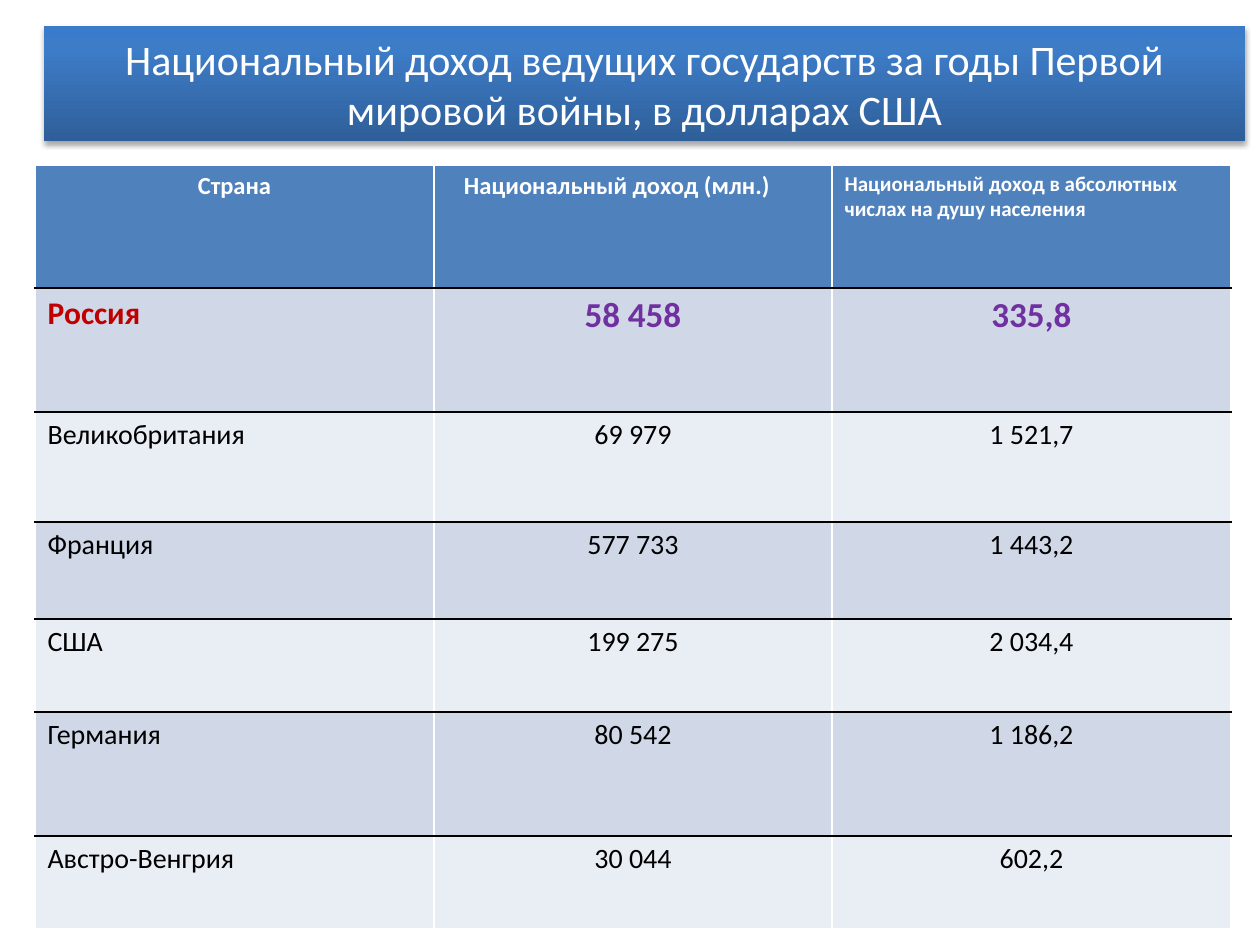
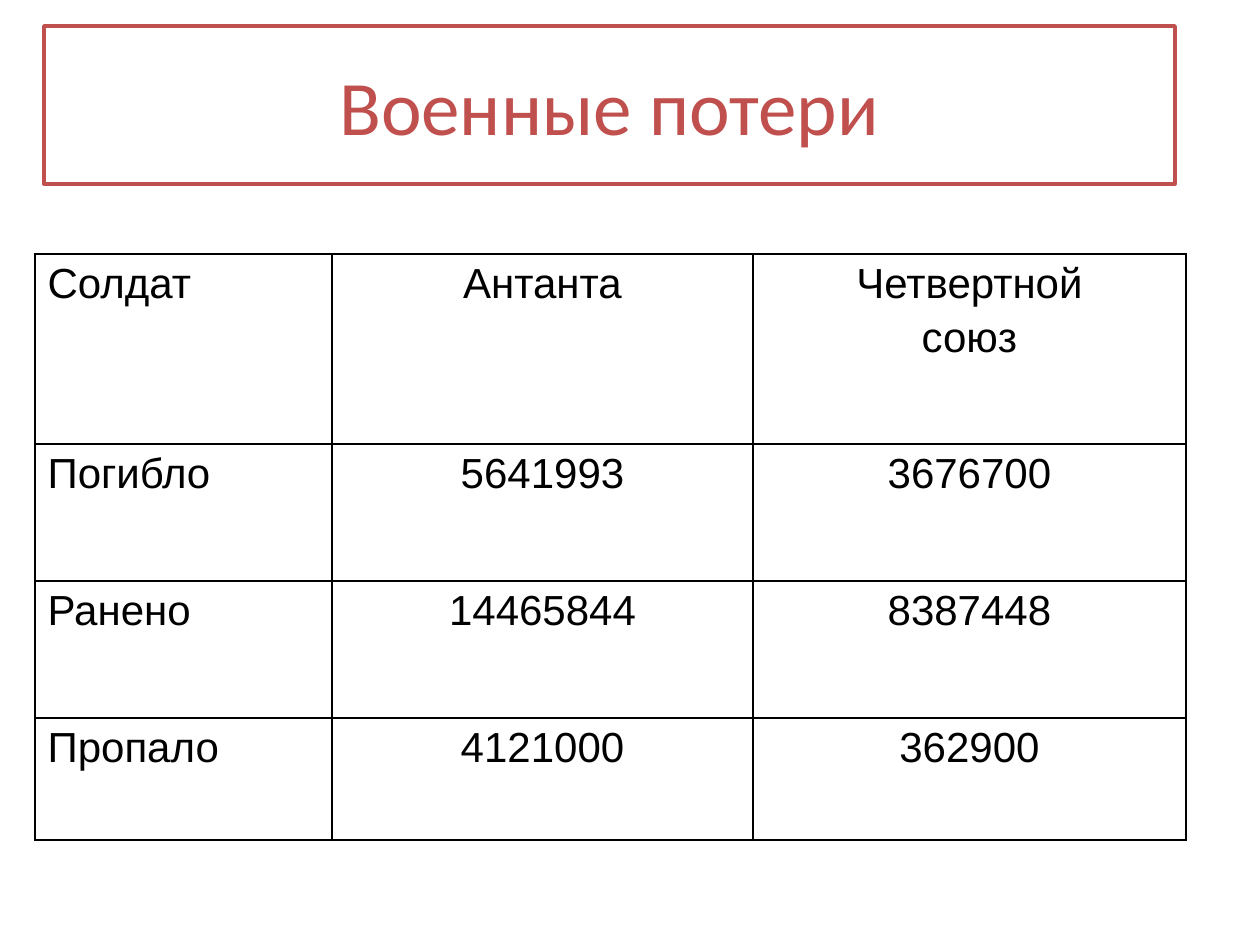
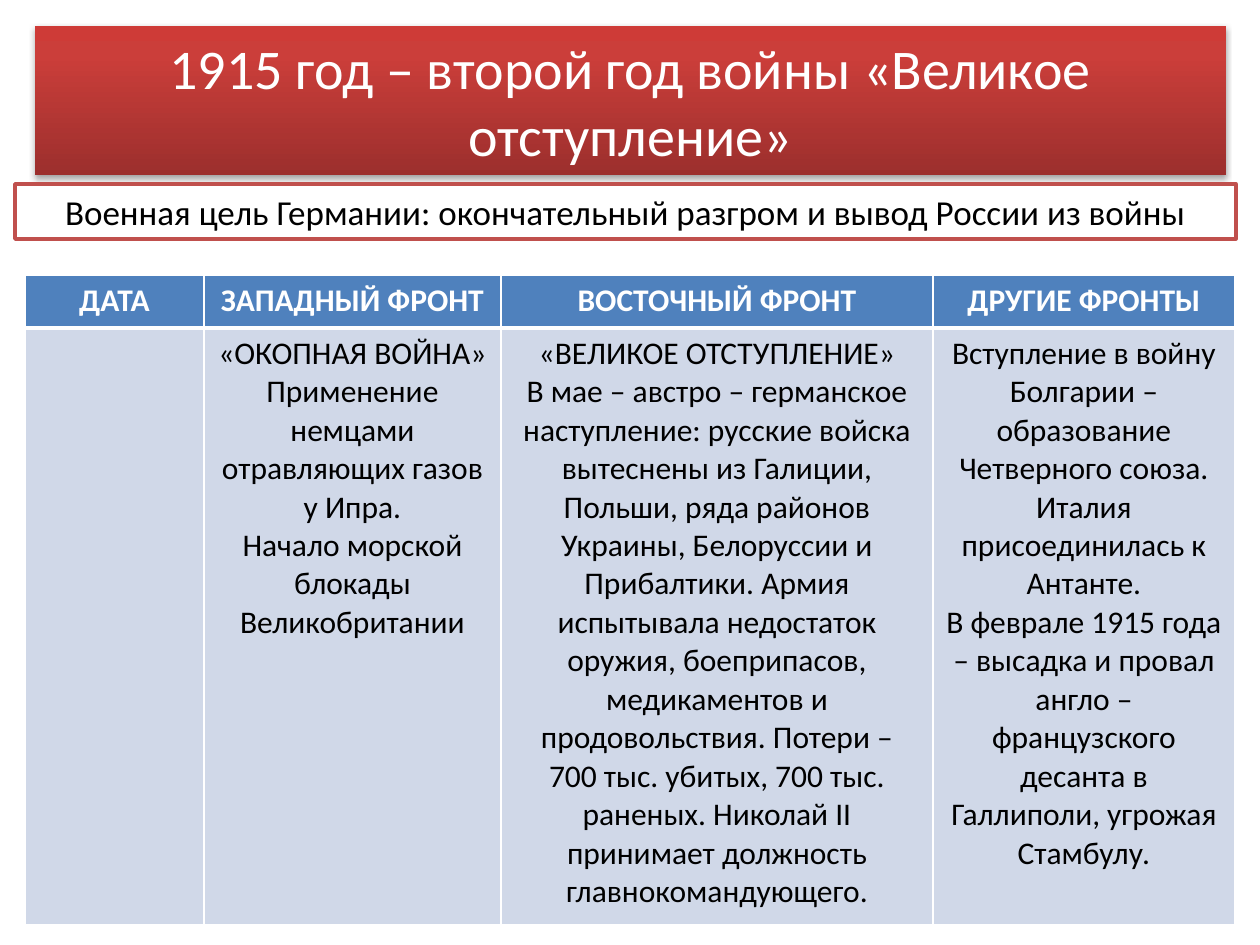
from copy import deepcopy

from lxml.etree import SubElement
from pptx import Presentation
from pptx.dml.color import RGBColor
from pptx.enum.shapes import MSO_SHAPE
from pptx.enum.text import MSO_ANCHOR, MSO_AUTO_SIZE, PP_ALIGN
from pptx.oxml.ns import qn
from pptx.util import Emu, Pt

WHITE = RGBColor(0xFF, 0xFF, 0xFF)
BLACK = RGBColor(0x00, 0x00, 0x00)
HEADER_BLUE = RGBColor(0x4F, 0x81, 0xBD)
BAND_DARK = RGBColor(0xD0, 0xD8, 0xE8)
BAND_LIGHT = RGBColor(0xE9, 0xED, 0xF4)
BRICK = RGBColor(0xC0, 0x50, 0x4D)
RUSSIA_RED = RGBColor(0xC0, 0x00, 0x00)
RUSSIA_PURPLE = RGBColor(0x70, 0x30, 0xA0)
BLUE_GRADIENT = (
    RGBColor(0x2F, 0x5F, 0x99), RGBColor(0x3D, 0x7C, 0xC7), RGBColor(0x3A, 0x7C, 0xCB))
RED_GRADIENT = (
    RGBColor(0x9C, 0x2F, 0x2D), RGBColor(0xCB, 0x3E, 0x3A), RGBColor(0xCE, 0x3B, 0x37))
GRADIENT_POSITIONS = (0, 0.8, 1)

BODY_FONT = "Calibri"
LOSSES_FONT = "Arial"
LEFT, CENTER = PP_ALIGN.LEFT, PP_ALIGN.CENTER

INCOME_ROWS = [
    ("Страна", "Национальный доход (млн.)",
     "Национальный доход в абсолютных числах на душу населения"),
    ("Россия", "58 458", "335,8"),
    ("Великобритания", "69 979", "1 521,7"),
    ("Франция", "577 733", "1 443,2"),
    ("США", "199 275", "2 034,4"),
    ("Германия", "80 542", "1 186,2"),
    ("Австро-Венгрия", "30 044", "602,2"),
]
LOSSES_ROWS = [
    ("Солдат", "Антанта", "Четвертной\nсоюз"),
    ("Погибло", "5641993", "3676700"),
    ("Ранено", "14465844", "8387448"),
    ("Пропало", "4121000", "362900"),
]
FRONTS_ROWS = [
    ("ДАТА", "ЗАПАДНЫЙ ФРОНТ", "ВОСТОЧНЫЙ ФРОНТ", "ДРУГИЕ ФРОНТЫ"),
    ("",
     "«ОКОПНАЯ ВОЙНА»\n"
     "Применение немцами отравляющих газов у Ипра.\n"
     "Начало морской блокады Великобритании",
     "«ВЕЛИКОЕ ОТСТУПЛЕНИЕ»\n"
     "В мае – австро – германское наступление: русские войска вытеснены из Галиции, "
     "Польши, ряда районов Украины, Белоруссии и Прибалтики. Армия испытывала "
     "недостаток оружия, боеприпасов, медикаментов и продовольствия. Потери – "
     "700 тыс. убитых, 700 тыс. раненых. Николай II принимает должность "
     "главнокомандующего.",
     "Вступление в войну Болгарии – образование Четверного союза.\n"
     "Италия присоединилась к Антанте.\n"
     "В феврале 1915 года – высадка и провал англо – французского десанта в "
     "Галлиполи, угрожая Стамбулу."),
]


def px(length):
    return Emu(round(length * 914400 / 126))


def format_text(text_frame, size, color, align=CENTER, bold=False, font=BODY_FONT):
    for paragraph in text_frame.paragraphs:
        paragraph.alignment = align
        for run in paragraph.runs:
            run.font.name = font
            run.font.size = Pt(size)
            run.font.bold = bold
            run.font.color.rgb = color


def fill_box(box, text, size, color):
    frame = box.text_frame
    frame.text = text
    frame.word_wrap = True
    frame.auto_size = MSO_AUTO_SIZE.NONE
    frame.vertical_anchor = MSO_ANCHOR.MIDDLE
    format_text(frame, size, color)


def outline_box(box):
    box.fill.solid()
    box.fill.fore_color.rgb = WHITE
    box.line.color.rgb = BRICK
    box.line.width = Pt(2)


def add_titled_slide(deck, text, left, top, width, height, size, color):
    slide = deck.slides.add_slide(deck.slide_layouts[5])
    title = slide.shapes.title
    title.left, title.top, title.width, title.height = map(px, (left, top, width, height))
    fill_box(title, text, size, color)
    return slide


def add_gradient_band(title, colors):
    title.fill.gradient()
    title.fill.gradient_angle = 90
    stop_list = title._element.spPr.find(".//" + qn("a:gsLst"))
    stop_list.append(deepcopy(stop_list[0]))
    for stop, color, position in zip(title.fill.gradient_stops, colors, GRADIENT_POSITIONS):
        stop.color.rgb = color
        stop.position = position
    title.shadow.inherit = False
    effects = title._element.spPr.find(qn("a:effectLst"))
    shadow = SubElement(effects, qn("a:outerShdw"), blurRad="40000", dist="23000",
                        dir="5400000", rotWithShape="0")
    shade = SubElement(shadow, qn("a:srgbClr"), val=str(BLACK))
    SubElement(shade, qn("a:alpha"), val="35000")


def add_goal(slide, text, left, top, width, height):
    goal = slide.shapes.add_shape(MSO_SHAPE.RECTANGLE, *map(px, (left, top, width, height)))
    goal.shadow.inherit = False
    outline_box(goal)
    fill_box(goal, text, 20, BLACK)


def add_grid(slide, left, top, widths, heights, rows):
    frame = slide.shapes.add_table(len(rows), len(widths), px(left), px(top),
                                   px(sum(widths)), px(sum(heights)))
    table = frame.table
    table.first_row = table.horz_banding = False
    for column, width in zip(table.columns, widths):
        column.width = px(width)
    for row, height, texts in zip(table.rows, heights, rows):
        row.height = px(height)
        for cell, text in zip(row.cells, texts):
            cell.text_frame.text = text
    return table


def style_cell(cell, fill, side, top, bottom):
    properties = cell._tc.get_or_add_tcPr()
    for edge, (color, width) in zip("LRTB", (side, side, top, bottom)):
        line = SubElement(properties, qn(f"a:ln{edge}"), w=str(Pt(width)))
        paint = SubElement(line, qn("a:solidFill"))
        SubElement(paint, qn("a:srgbClr"), val=str(color))
    if fill is None:
        cell.fill.background()
    else:
        cell.fill.solid()
        cell.fill.fore_color.rgb = fill


def build_income_slide(deck):
    slide = add_titled_slide(
        deck, "Национальный доход ведущих государств за годы Первой мировой войны, "
        "в долларах США", 44, 26, 1201, 115, 24, WHITE)
    add_gradient_band(slide.shapes.title, BLUE_GRADIENT)
    table = add_grid(slide, 35, 165, (399, 398, 399),
                     (123, 124, 110, 97, 93, 124, 93), INCOME_ROWS)
    white_edge, black_edge = (WHITE, 1), (BLACK, 1)
    last = len(INCOME_ROWS) - 1
    for index, row in enumerate(table.rows):
        band = BAND_DARK if index % 2 else BAND_LIGHT
        for column, cell in enumerate(row.cells):
            style_cell(cell, band if index else HEADER_BLUE, white_edge,
                       black_edge if index else white_edge,
                       white_edge if index == last else black_edge)
            if index > 1:
                format_text(cell.text_frame, 16, BLACK, CENTER if column else LEFT)
    country, income, per_head = table.rows[0].cells
    format_text(country.text_frame, 14, WHITE, CENTER, True)
    format_text(income.text_frame, 14, WHITE, LEFT, True)
    income.margin_left = px(30)
    format_text(per_head.text_frame, 12, WHITE, LEFT, True)
    russia, *russia_values = table.rows[1].cells
    format_text(russia.text_frame, 18, RUSSIA_RED, LEFT, True)
    for value in russia_values:
        format_text(value.text_frame, 20, RUSSIA_PURPLE, CENTER, True)


def build_losses_slide(deck):
    slide = add_titled_slide(deck, "Военные потери", 44, 26, 1131, 158, 44, BRICK)
    outline_box(slide.shapes.title)
    table = add_grid(slide, 35, 254, (297, 421, 433), (190, 137, 137, 122), LOSSES_ROWS)
    edge = (BLACK, 1)
    for row in table.rows:
        for column, cell in enumerate(row.cells):
            style_cell(cell, None, edge, edge, edge)
            format_text(cell.text_frame, 24, BLACK, CENTER if column else LEFT,
                        font=LOSSES_FONT)
            for paragraph in cell.text_frame.paragraphs[1:]:
                paragraph.space_before = Pt(4)


def build_fronts_slide(deck):
    slide = add_titled_slide(deck, "1915 год – второй год войны «Великое отступление»",
                             35, 26, 1191, 149, 32, WHITE)
    add_gradient_band(slide.shapes.title, RED_GRADIENT)
    add_goal(slide, "Военная цель Германии: окончательный разгром и вывод России из войны",
             15, 184, 1221, 55)
    table = add_grid(slide, 25, 275, (179, 297, 432, 302), (53, 597), FRONTS_ROWS)
    thin, thick = (WHITE, 1), (WHITE, 3)
    header, events = table.rows
    for cell in header.cells:
        style_cell(cell, HEADER_BLUE, thin, thin, thick)
        format_text(cell.text_frame, 18, WHITE, bold=True)
    for cell in events.cells:
        style_cell(cell, BAND_DARK, thin, thick, thin)
        format_text(cell.text_frame, 18, BLACK)


def main():
    deck = Presentation()
    deck.slide_width, deck.slide_height = px(1260), px(945)
    build_income_slide(deck)
    build_losses_slide(deck)
    build_fronts_slide(deck)
    deck.save("out.pptx")


if __name__ == "__main__":
    main()
